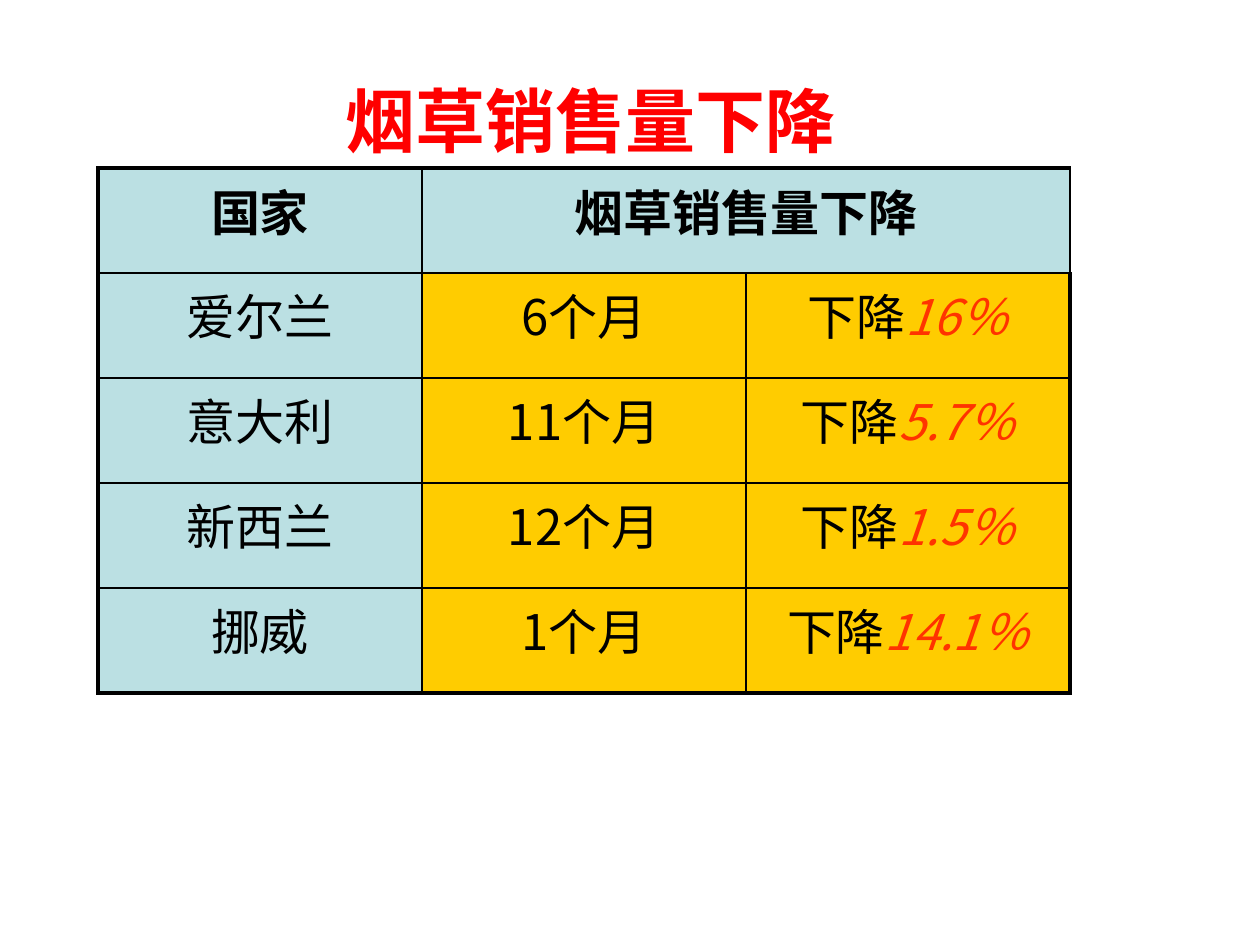
from lxml.etree import SubElement
from pptx import Presentation
from pptx.dml.color import RGBColor
from pptx.enum.text import MSO_ANCHOR, MSO_AUTO_SIZE, PP_ALIGN
from pptx.oxml.ns import qn
from pptx.util import Pt

TITLE = "烟草销售量下降"
HEADER = ("国家", "烟草销售量下降")
DROP = "下降"
SALES = [
    ("爱尔兰", "6个月", "16％"),
    ("意大利", "11个月", "5.7％"),
    ("新西兰", "12个月", "1.5％"),
    ("挪威", "1个月", "14.1％"),
]

FONT = "Noto Sans CJK SC"
COLORS = {"title": "FF0000", "text": "000000", "drop": "FF3300",
          "label": "BBE0E3", "value": "FFCC00", "border": "000000"}
SCALE = 914400 / 126
TITLE_BOX = (0, 78, 1181, 84)
TABLE_LEFT, TABLE_TOP = 98, 168
COLUMN_WIDTH, ROW_HEIGHT = 324, 105
OUTER, INNER = 2.25, 1


def px(length):
    return round(length * SCALE)


def add_text(paragraph, text, size=28, color="text", bold=False, italic=False):
    paragraph.alignment = PP_ALIGN.CENTER
    run = paragraph.add_run()
    run.text = text
    font = run.font
    font.size, font.bold, font.italic, font.name = Pt(size), bold, italic, FONT
    font.color.rgb = RGBColor.from_string(COLORS[color])
    SubElement(run._r.get_or_add_rPr(), qn("a:ea"), typeface=FONT)


def set_borders(cell, widths):
    """Draw the left, right, top and bottom borders, with widths in points."""
    properties = cell._tc.get_or_add_tcPr()
    for position, (side, width) in enumerate(zip("LRTB", widths)):
        line = SubElement(properties, qn(f"a:ln{side}"), w=str(Pt(width)))
        fill = SubElement(line, qn("a:solidFill"))
        SubElement(fill, qn("a:srgbClr"), val=COLORS["border"])
        properties.insert(position, line)


def space_before(paragraph, percent):
    spacing = SubElement(paragraph._p.get_or_add_pPr(), qn("a:spcBef"))
    SubElement(spacing, qn("a:spcPct"), val=str(percent * 1000))


def add_title(slide):
    title = slide.shapes.title
    title.left, title.top, title.width, title.height = map(px, TITLE_BOX)
    frame = title.text_frame
    frame.auto_size = MSO_AUTO_SIZE.NONE
    frame.vertical_anchor = MSO_ANCHOR.MIDDLE
    add_text(frame.paragraphs[0], TITLE, size=40, color="title", bold=True)


def add_sales_table(slide):
    row_count, column_count = len(SALES) + 1, 3
    frame = slide.shapes.add_table(
        row_count, column_count, px(TABLE_LEFT), px(TABLE_TOP),
        px(column_count * COLUMN_WIDTH), px(row_count * ROW_HEIGHT))
    table = frame.table
    table.first_row = table.horz_banding = False
    for column in table.columns:
        column.width = px(COLUMN_WIDTH)
    for row in table.rows:
        row.height = px(ROW_HEIGHT)
    table.cell(0, 1).merge(table.cell(0, 2))

    for r in range(row_count):
        for c in range(column_count):
            cell = table.cell(r, c)
            fill = "label" if r == 0 or c == 0 else "value"
            cell.fill.solid()
            cell.fill.fore_color.rgb = RGBColor.from_string(COLORS[fill])
            on_edge = (c == 0, c == column_count - 1, r == 0, r == row_count - 1)
            set_borders(cell, [OUTER if edge else INNER for edge in on_edge])
            if cell.is_spanned:
                continue
            paragraph = cell.text_frame.paragraphs[0]
            space_before(paragraph, 20)
            if r == 0:
                add_text(paragraph, HEADER[c], bold=True)
            elif c < 2:
                add_text(paragraph, SALES[r - 1][c])
            else:
                add_text(paragraph, DROP)
                add_text(paragraph, SALES[r - 1][c], color="drop", italic=True)


def main():
    presentation = Presentation()
    presentation.slide_width, presentation.slide_height = px(1260), px(945)
    slide = presentation.slides.add_slide(presentation.slide_layouts[5])
    add_title(slide)
    add_sales_table(slide)
    presentation.save("out.pptx")


if __name__ == "__main__":
    main()
